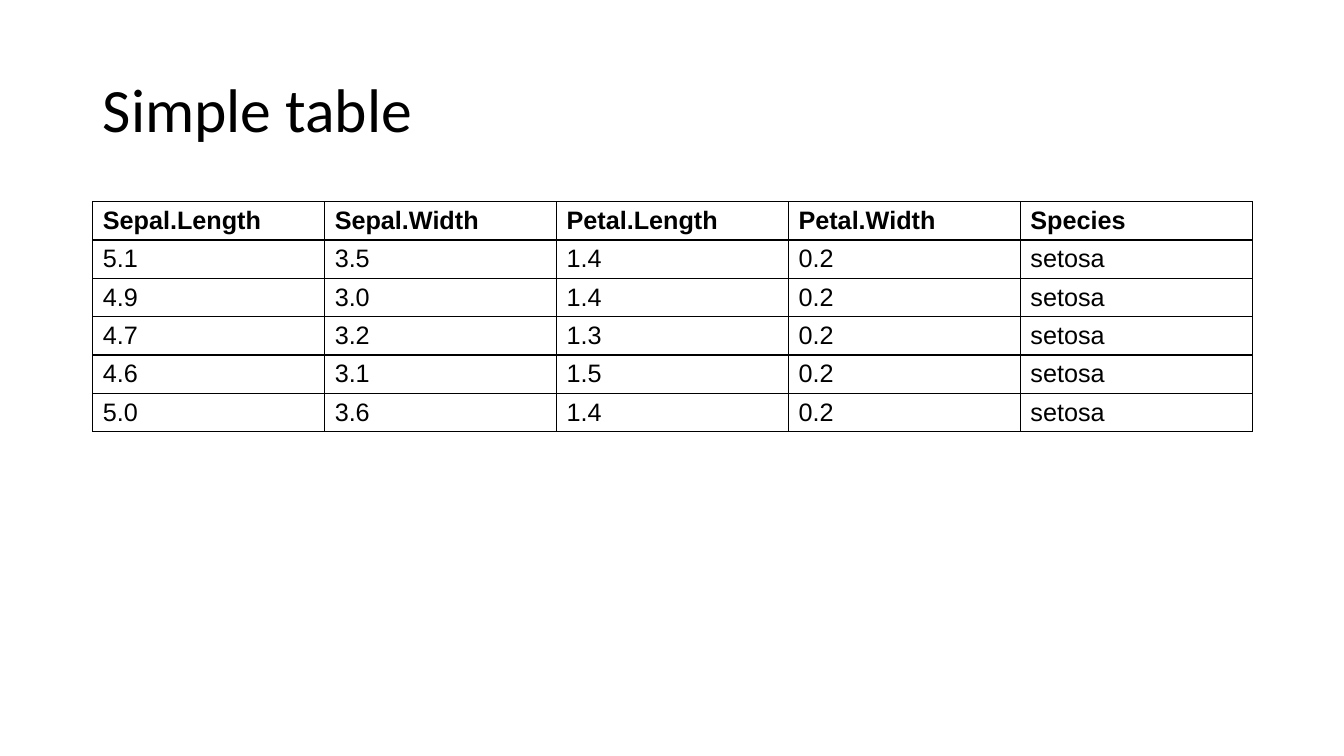
from lxml import etree
from pptx import Presentation
from pptx.dml.color import RGBColor
from pptx.enum.text import MSO_ANCHOR, PP_ALIGN
from pptx.oxml.ns import qn
from pptx.util import Inches, Pt

BLACK = RGBColor(0x00, 0x00, 0x00)
WHITE = RGBColor(0xFF, 0xFF, 0xFF)
MIDDLE = MSO_ANCHOR.MIDDLE
LEFT = PP_ALIGN.LEFT
TITLE_ONLY = 5

TITLE_FONT = {"name": "Calibri", "size": Pt(44), "bold": False}
HEADER_FONT = {"name": "Arial", "size": Pt(18), "bold": True}
BODY_FONT = {**HEADER_FONT, "bold": False}

IRIS_ROWS = [
    ["Sepal.Length", "Sepal.Width", "Petal.Length", "Petal.Width", "Species"],
    ["5.1", "3.5", "1.4", "0.2", "setosa"],
    ["4.9", "3.0", "1.4", "0.2", "setosa"],
    ["4.7", "3.2", "1.3", "0.2", "setosa"],
    ["4.6", "3.1", "1.5", "0.2", "setosa"],
    ["5.0", "3.6", "1.4", "0.2", "setosa"],
]


class TableSlide:
    """Draws a title and a bordered table on a grid of columns and rows."""

    left, column, row = Inches(0.92), Inches(2.3), Inches(0.38)

    def __init__(self, presentation):
        layout = presentation.slide_layouts[TITLE_ONLY]
        self.slide = presentation.slides.add_slide(layout)

    def format_text(self, paragraph, font_format):
        paragraph.alignment = LEFT
        font = paragraph.runs[0].font
        for name, value in font_format.items():
            setattr(font, name, value)
        font.color.rgb = BLACK

    def add_title(self, text, top, height, columns):
        title = self.slide.shapes.title
        place = {"left": self.left, "top": top,
                 "width": columns * self.column, "height": height}
        for name, value in place.items():
            setattr(title, name, value)
        title.text_frame.text = text
        title.text_frame.vertical_anchor = MIDDLE
        paragraph = title.text_frame.paragraphs[0]
        paragraph.line_spacing = 0.9
        self.format_text(paragraph, TITLE_FONT)

    def add_borders(self, cell):
        properties = cell._tc.get_or_add_tcPr()
        for index, side in enumerate(("a:lnL", "a:lnR", "a:lnT", "a:lnB")):
            line = etree.Element(qn(side), w=str(Pt(1)))
            fill = etree.SubElement(line, qn("a:solidFill"))
            etree.SubElement(fill, qn("a:srgbClr"), val=str(BLACK))
            properties.insert(index, line)

    def add_table(self, rows, top):
        row_count, column_count = len(rows), len(rows[0])
        table = self.slide.shapes.add_table(
            row_count, column_count, self.left, top,
            column_count * self.column, row_count * self.row).table
        table.horz_banding = False
        for row_index, values in enumerate(rows):
            font_format = BODY_FONT if row_index else HEADER_FONT
            for column_index, value in enumerate(values):
                cell = table.cell(row_index, column_index)
                cell.text = value
                cell.vertical_anchor = MIDDLE
                cell.fill.solid()
                cell.fill.fore_color.rgb = WHITE
                self.add_borders(cell)
                self.format_text(cell.text_frame.paragraphs[0], font_format)


def main():
    presentation = Presentation()
    presentation.slide_width = Inches(13.33)
    presentation.slide_height = Inches(7.5)
    table_slide = TableSlide(presentation)
    table_slide.add_title("Simple table", Inches(0.39), Inches(1.45), len(IRIS_ROWS[0]))
    table_slide.add_table(IRIS_ROWS, Inches(2))
    presentation.save("out.pptx")


if __name__ == "__main__":
    main()
